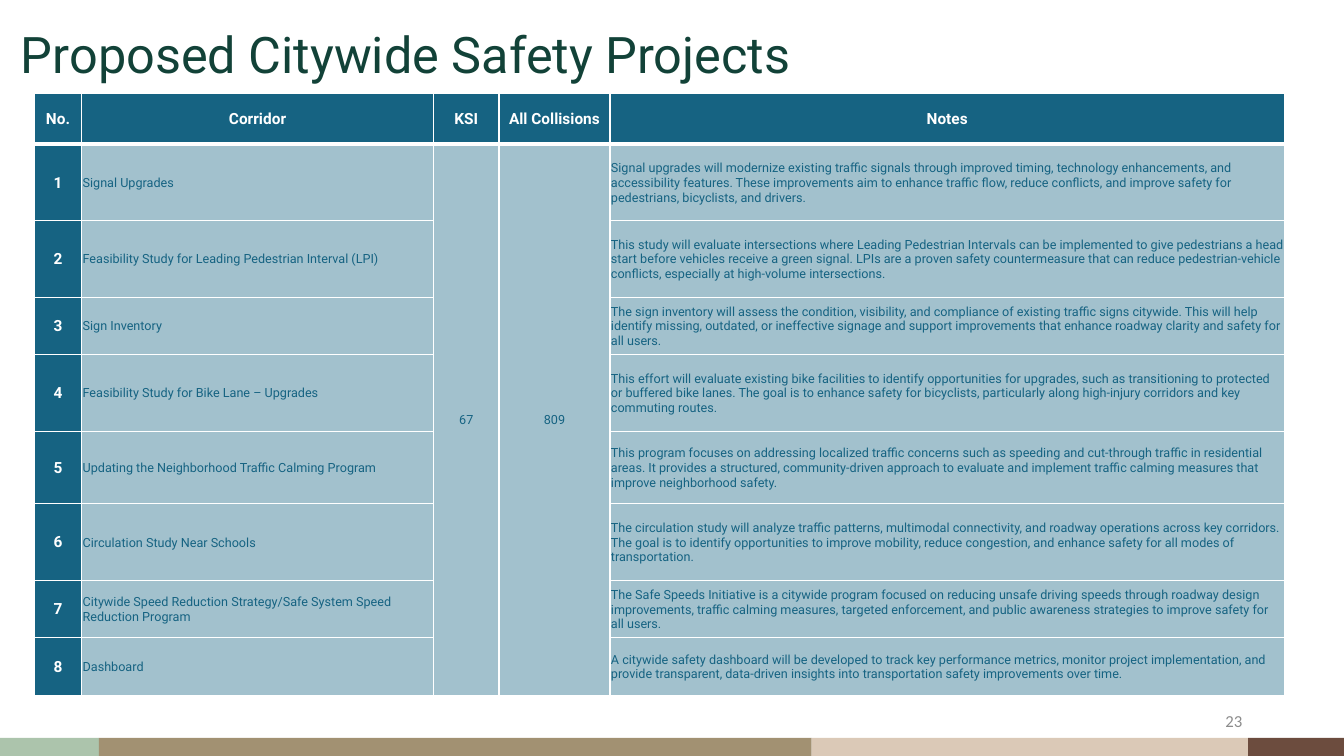
from itertools import accumulate

from lxml import etree
from pptx import Presentation
from pptx import util as u
from pptx.dml.color import RGBColor
from pptx.enum import shapes, text
from pptx.oxml import ns

WIDTH, HEIGHT = 13.33, 7.5
WHITE = RGBColor(0xFF, 0xFF, 0xFF)
TEAL = RGBColor(0x16, 0x63, 0x82)
PALE_TEAL = RGBColor(0xA2, 0xC1, 0xCD)
DARK_GREEN = RGBColor(0x12, 0x42, 0x38)
GREY = RGBColor(0x8C, 0x8C, 0x8C)
SAGE = RGBColor(0xAC, 0xC4, 0xAC)
KHAKI = RGBColor(0xA2, 0x91, 0x72)
SAND = RGBColor(0xDB, 0xC9, 0xB7)
BROWN = RGBColor(0x6C, 0x4C, 0x3E)

LEFT, CENTER, RIGHT = text.PP_ALIGN.LEFT, text.PP_ALIGN.CENTER, text.PP_ALIGN.RIGHT

# Footer strip: colour and width of each band, from the left
BANDS = [(SAGE, 0.98), (KHAKI, 7.07), (SAND, 4.33), (BROWN, 0.95)]
BAND_TOP = 7.32

# Table grid
TABLE_LEFT, TABLE_TOP = 0.34, 0.93
COLUMNS = [0.47, 3.49, 0.65, 1.1, 6.69]
ROWS = [0.5, 0.76, 0.76, 0.57, 0.76, 0.72, 0.76, 0.57, 0.57]
HEADINGS = ["No.", "Corridor", "KSI", "All Collisions", "Notes"]
CITYWIDE_KSI, CITYWIDE_COLLISIONS = "67", "809"
PROJECTS = [
    ("Signal Upgrades",
     "Signal upgrades will modernize existing traffic signals through improved timing, "
     "technology enhancements, and accessibility features. These improvements aim to enhance "
     "traffic flow, reduce conflicts, and improve safety for pedestrians, bicyclists, and drivers."),
    ("Feasibility Study for Leading Pedestrian Interval (LPI)",
     "This study will evaluate intersections where Leading Pedestrian Intervals can be implemented "
     "to give pedestrians a head start before vehicles receive a green signal. LPIs are a proven "
     "safety countermeasure that can reduce pedestrian-vehicle conflicts, especially at high-volume "
     "intersections."),
    ("Sign Inventory",
     "The sign inventory will assess the condition, visibility, and compliance of existing traffic "
     "signs citywide. This will help identify missing, outdated, or ineffective signage and support "
     "improvements that enhance roadway clarity and safety for all users."),
    ("Feasibility Study for Bike Lane – Upgrades",
     "This effort will evaluate existing bike facilities to identify opportunities for upgrades, "
     "such as transitioning to protected or buffered bike lanes. The goal is to enhance safety for "
     "bicyclists, particularly along high-injury corridors and key commuting routes."),
    ("Updating the Neighborhood Traffic Calming Program",
     "This program focuses on addressing localized traffic concerns such as speeding and cut-through "
     "traffic in residential areas. It provides a structured, community-driven approach to evaluate "
     "and implement traffic calming measures that improve neighborhood safety."),
    ("Circulation Study Near Schools",
     "The circulation study will analyze traffic patterns, multimodal connectivity, and roadway "
     "operations across key corridors. The goal is to identify opportunities to improve mobility, "
     "reduce congestion, and enhance safety for all modes of transportation."),
    ("Citywide Speed Reduction Strategy/Safe System Speed Reduction Program",
     "The Safe Speeds Initiative is a citywide program focused on reducing unsafe driving speeds "
     "through roadway design improvements, traffic calming measures, targeted enforcement, and "
     "public awareness strategies to improve safety for all users."),
    ("Dashboard",
     "A citywide safety dashboard will be developed to track key performance metrics, monitor "
     "project implementation, and provide transparent, data-driven insights into transportation "
     "safety improvements over time."),
]


def format_paragraph(paragraph, size, color, font="Roboto", bold=False, align=LEFT):
    paragraph.alignment = align
    for run in paragraph.runs:
        run.font.name, run.font.size, run.font.bold = font, u.Pt(size), bold
        run.font.color.rgb = color


def add_label(slide, wording, left, top, width, height, **style):
    label = slide.shapes.add_textbox(*map(u.Inches, (left, top, width, height)))
    frame = label.text_frame
    frame.word_wrap = True
    frame.vertical_anchor = text.MSO_ANCHOR.MIDDLE
    frame.text = wording
    format_paragraph(frame.paragraphs[0], **style)
    return frame.paragraphs[0]


def add_footer_bands(slide):
    rights = accumulate(width for _, width in BANDS)
    for (color, width), right in zip(BANDS, rights):
        band = slide.shapes.add_shape(
            shapes.MSO_SHAPE.RECTANGLE, u.Inches(right - width), u.Inches(BAND_TOP),
            u.Inches(width), u.Inches(HEIGHT - BAND_TOP))
        band.shadow.inherit = False
        band.fill.solid()
        band.fill.fore_color.rgb = color
        band.line.fill.background()


def set_borders(cell, top=1, bottom=1):
    properties = cell._tc.get_or_add_tcPr()
    weights = {"a:lnL": 1, "a:lnR": 1, "a:lnT": top, "a:lnB": bottom}
    for place, (tag, weight) in enumerate(weights.items()):
        border = etree.Element(ns.qn(tag), w=str(u.Pt(weight)))
        fill = etree.SubElement(border, ns.qn("a:solidFill"))
        etree.SubElement(fill, ns.qn("a:srgbClr"), val=str(WHITE))
        properties.insert(place, border)


def fill_cell(cell, wording, row, column):
    heading = row == 0 or column == 0
    cell.fill.solid()
    cell.fill.fore_color.rgb = TEAL if heading else PALE_TEAL
    cell.margin_left = cell.margin_right = cell.margin_top = u.Inches(0.01)
    cell.margin_bottom = 0
    cell.vertical_anchor = text.MSO_ANCHOR.MIDDLE
    cell.text_frame.text = wording
    centred = heading or column in (2, 3)
    format_paragraph(cell.text_frame.paragraphs[0], size=11 if heading else 9,
                     color=WHITE if heading else TEAL, bold=heading,
                     align=CENTER if centred else LEFT)
    # A heavier rule separates the headings from the projects
    set_borders(cell, top=3 if row == 1 else 1, bottom=3 if row == 0 else 1)


def add_projects_table(slide):
    table = slide.shapes.add_table(
        len(ROWS), len(COLUMNS), u.Inches(TABLE_LEFT), u.Inches(TABLE_TOP),
        u.Inches(sum(COLUMNS)), u.Inches(sum(ROWS))).table
    for column, width in zip(table.columns, COLUMNS):
        column.width = u.Inches(width)
    for row, height in zip(table.rows, ROWS):
        row.height = u.Inches(height)

    content = [HEADINGS]
    for number, (corridor, notes) in enumerate(PROJECTS, 1):
        totals = (CITYWIDE_KSI, CITYWIDE_COLLISIONS) if number == 1 else ("", "")
        content.append([str(number), corridor, *totals, notes])
    for row, wordings in enumerate(content):
        for column, wording in enumerate(wordings):
            fill_cell(table.cell(row, column), wording, row, column)

    # Citywide totals span all projects
    for column in (2, 3):
        table.cell(1, column).merge(table.cell(len(PROJECTS), column))


def main():
    deck = Presentation()
    deck.slide_width, deck.slide_height = u.Inches(WIDTH), u.Inches(HEIGHT)
    slide = deck.slides.add_slide(deck.slide_layouts[6])

    # Footer
    add_footer_bands(slide)
    page_number = add_label(slide, "23", 9.42, 6.95, 3, 0.4,
                            size=12, color=GREY, font="Calibri", align=RIGHT)
    page_number.space_after = u.Pt(6)

    # Projects and title
    add_projects_table(slide)
    title = add_label(slide, "Proposed Citywide Safety Projects", 0.11, -0.16, 12.88, 1.45,
                      size=36, color=DARK_GREEN)
    title.line_spacing = 0.9

    deck.save("out.pptx")


if __name__ == "__main__":
    main()
